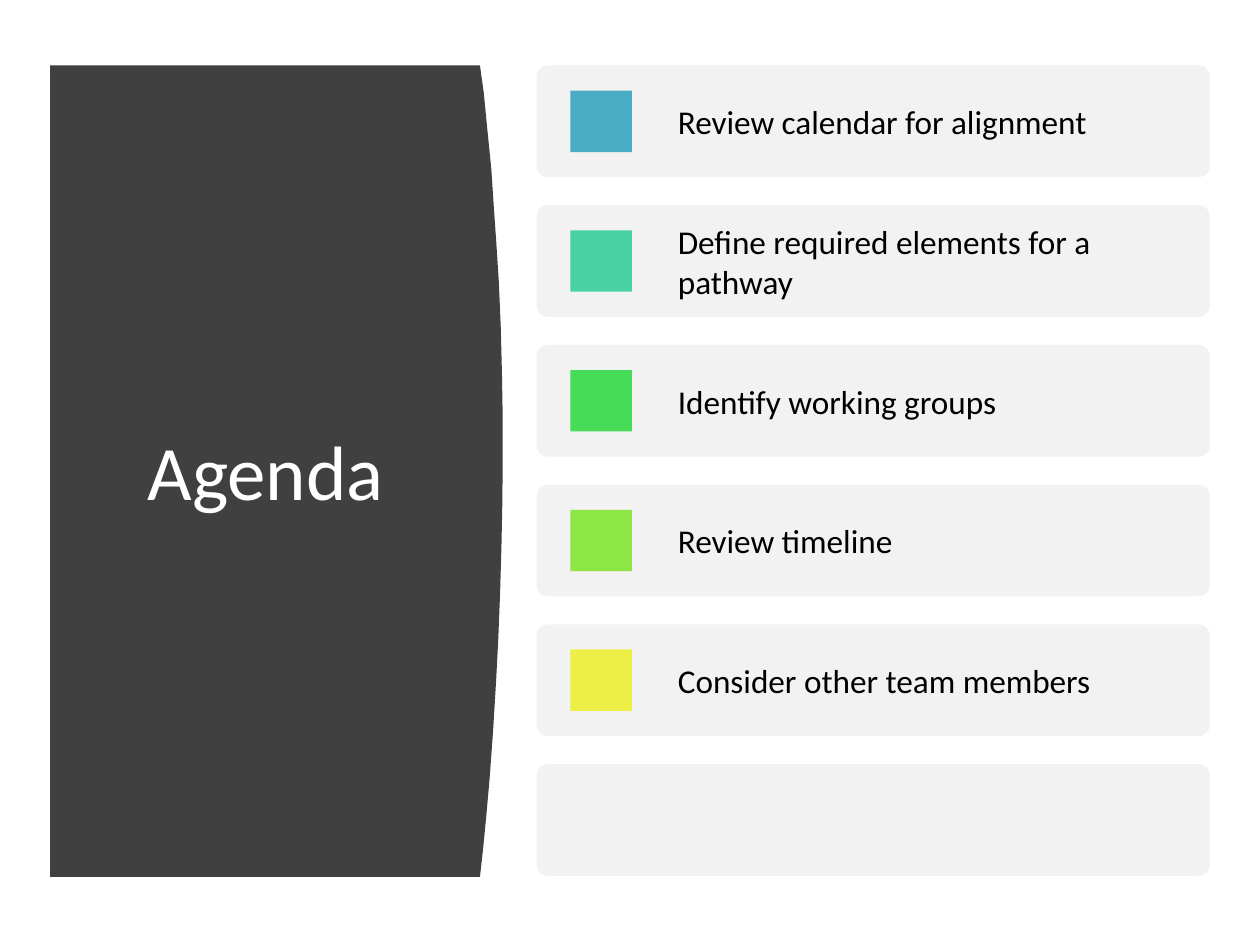
"""Build the agenda slide: a curved title panel beside six rounded rows."""
from pptx import Presentation
from pptx.dml.color import RGBColor
from pptx.enum.shapes import MSO_SHAPE
from pptx.enum.text import MSO_ANCHOR, PP_ALIGN
from pptx.util import Pt

TITLE = "Agenda"
ITEMS = [
    ("Review calendar for alignment", "4BACC6"),
    ("Define required elements for a pathway", "49D1A3"),
    ("Identify working groups", "47DC57"),
    ("Review timeline", "8DE646"),
    ("Consider other team members", "EEEF46"),
    (None, None),
]
PANEL_LEFT = 28.6
PANEL_EDGE = [
    (274.3, 37.4), (276.5, 53.3), (278.6, 74.9), (280.8, 96.5), (282.2, 118.1),
    (283.7, 139.7), (285.1, 161.3), (286.2, 187.2), (286.9, 213.8), (287.3, 239),
    (287.3, 264.2), (287.1, 288), (286.6, 311.8), (285.8, 339.1), (284.8, 365),
    (283.5, 390), (281.8, 418), (279.9, 444.2), (277.9, 466.6), (276, 486),
    (274.3, 501.1),
]
ROW_LEFT, ROW_TOP, ROW_W, ROW_H, PITCH = 306.7, 37.4, 384.6, 63.9, 79.85
ICON_LEFT, ICON_SIZE = 326, 35.15
LABEL_LEFT, LABEL_W = 380.6, 310.7


def paint(sp, color):
    sp.shadow.inherit = False
    sp.fill.solid()
    sp.fill.fore_color.rgb = RGBColor.from_string(color)
    sp.line.fill.background()
    return sp


def add_block(s, kind, x, y, w, h, color):
    return paint(s.shapes.add_shape(kind, Pt(x), Pt(y), Pt(w), Pt(h)), color)


def add_text(s, text, x, y, w, h, size, color, align=PP_ALIGN.LEFT, inset=6.75):
    tf = s.shapes.add_textbox(Pt(x), Pt(y), Pt(w), Pt(h)).text_frame
    tf.word_wrap = True
    tf.vertical_anchor = MSO_ANCHOR.MIDDLE
    tf.margin_left = tf.margin_right = tf.margin_top = tf.margin_bottom = Pt(inset)
    p = tf.paragraphs[0]
    p.alignment = align
    r = p.add_run()
    r.text = text
    r.font.name = "Calibri"
    r.font.size = Pt(size)
    r.font.color.rgb = RGBColor.from_string(color)


def add_panel(s):
    top, bottom = PANEL_EDGE[0][1], PANEL_EDGE[-1][1]
    outline = s.shapes.build_freeform(Pt(PANEL_LEFT), Pt(top))
    corners = PANEL_EDGE + [(PANEL_LEFT, bottom)]
    outline.add_line_segments([(Pt(x), Pt(y)) for x, y in corners], close=True)
    paint(outline.convert_to_shape(), "404040")
    add_text(s, TITLE, 51.1, 79.9, 201.6, 377.3, size=44, color="FFFFFF",
             align=PP_ALIGN.CENTER)


def add_row(s, y, text, color):
    row = add_block(s, MSO_SHAPE.ROUNDED_RECTANGLE, ROW_LEFT, y, ROW_W, ROW_H, "F2F2F2")
    row.adjustments[0] = 0.1
    if text:
        icon_top = y + (ROW_H - ICON_SIZE) / 2
        add_block(s, MSO_SHAPE.RECTANGLE, ICON_LEFT, icon_top, ICON_SIZE, ICON_SIZE, color)
        add_text(s, text, LABEL_LEFT, y, LABEL_W, ROW_H, size=19, color="000000")


def main():
    prs = Presentation()
    prs.slide_width, prs.slide_height = Pt(720), Pt(540)
    s = prs.slides.add_slide(prs.slide_layouts[6])
    add_panel(s)
    for i, (text, color) in enumerate(ITEMS):
        add_row(s, ROW_TOP + i * PITCH, text, color)
    prs.save("out.pptx")


if __name__ == "__main__":
    main()
